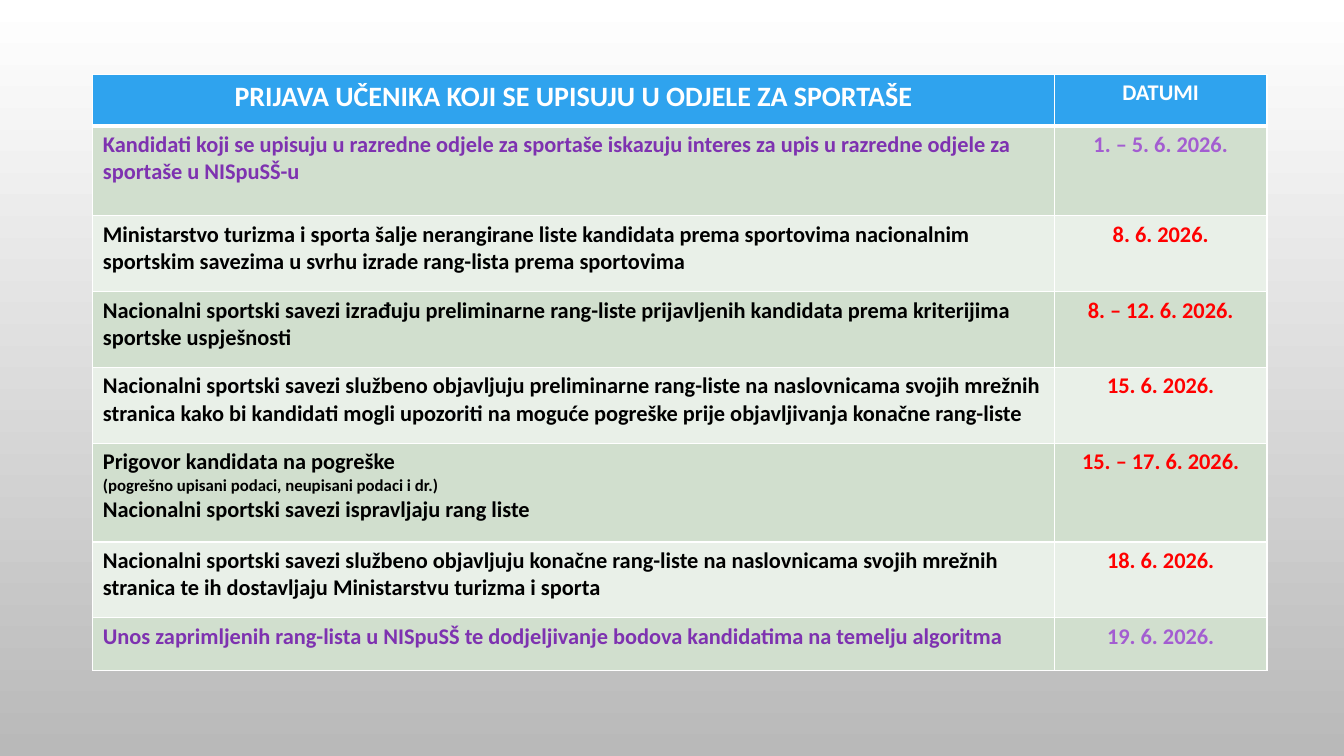
from dataclasses import dataclass

from lxml.etree import SubElement
from pptx import Presentation
from pptx.dml.color import RGBColor
from pptx.enum.text import PP_ALIGN
from pptx.oxml.ns import qn
from pptx.util import Cm, Pt


@dataclass(frozen=True)
class Theme:
    font: str = "Calibri"
    heading_size: int = 20
    body_size: int = 16
    note_size: int = 12
    white: str = "FFFFFF"
    black: str = "000000"
    red: str = "FF0000"
    purple: str = "7E32B0"
    light_purple: str = "A35DD1"
    header_fill: str = "2FA3EE"
    band_fills: tuple = ("D1DFCE", "E9F0E8")
    background_end: str = "B9B9B9"
    border_width: int = 1
    header_border_width: int = 3


THEME = Theme()

# Schedule: paragraphs, date, whether the school system handles the step, row height in cm
STEPS = [
    (["Kandidati koji se upisuju u razredne odjele za sportaše iskazuju interes "
      "za upis u razredne odjele za sportaše u NISpuSŠ-u"],
     "1. – 5. 6. 2026.", True, 2.26),
    (["Ministarstvo turizma i sporta šalje nerangirane liste kandidata prema sportovima "
      "nacionalnim sportskim savezima u svrhu izrade rang-lista prema sportovima"],
     "8. 6. 2026.", False, 1.91),
    (["Nacionalni sportski savezi izrađuju preliminarne rang-liste prijavljenih kandidata "
      "prema kriterijima sportske uspješnosti"],
     "8. – 12. 6. 2026.", False, 1.91),
    (["Nacionalni sportski savezi službeno objavljuju preliminarne rang-liste na naslovnicama "
      "svojih mrežnih stranica kako bi kandidati mogli upozoriti na moguće pogreške prije "
      "objavljivanja konačne rang-liste"],
     "15. 6. 2026.", False, 1.91),
    (["Prigovor kandidata na pogreške",
      "(pogrešno upisani podaci, neupisani podaci i dr.)",
      "Nacionalni sportski savezi ispravljaju rang liste"],
     "15. – 17. 6. 2026.", False, 2.49),
    (["Nacionalni sportski savezi službeno objavljuju konačne rang-liste na naslovnicama "
      "svojih mrežnih stranica te ih dostavljaju Ministarstvu turizma i sporta"],
     "18. 6. 2026.", False, 1.91),
    (["Unos zaprimljenih rang-lista u NISpuSŠ te dodjeljivanje bodova kandidatima "
      "na temelju algoritma"],
     "19. 6. 2026.", True, 1.32),
]
HEADER_HEIGHT = 1.3
COLUMN_WIDTHS = (24.23, 5.36)


def write_text(paragraph, text, *, size, color, align=PP_ALIGN.LEFT):
    paragraph.alignment = align
    run = paragraph.add_run()
    run.text = text
    run.font.name = THEME.font
    run.font.size = Pt(size)
    run.font.bold = True
    run.font.color.rgb = RGBColor.from_string(color)


class SlideBuilder:
    def __init__(self, slide, theme):
        self.slide = slide
        self.theme = theme

    def background(self):
        fill = self.slide.background.fill
        fill.gradient()
        fill.gradient_angle = 270
        colors = (self.theme.white, self.theme.background_end)
        for position, (stop, color) in enumerate(zip(fill.gradient_stops, colors)):
            stop.position = position
            stop.color.rgb = RGBColor.from_string(color)

    def table(self, left, top, widths, heights):
        table = self.slide.shapes.add_table(
            len(heights), len(widths), Cm(left), Cm(top),
            Cm(sum(widths)), Cm(sum(heights))).table
        for column, width in zip(table.columns, widths):
            column.width = Cm(width)
        for row, height in zip(table.rows, heights):
            row.height = Cm(height)
        return table

    def borders(self, cell, **widths):
        properties = cell._tc.get_or_add_tcPr()
        for side in "LRTB":
            width = widths.get(side, self.theme.border_width)
            line = SubElement(properties, qn(f"a:ln{side}"), w=str(Pt(width)))
            fill = SubElement(line, qn("a:solidFill"))
            SubElement(fill, qn("a:srgbClr"), val=self.theme.white)

    def cell(self, cell, lines, fill, align=PP_ALIGN.LEFT, **border_widths):
        self.borders(cell, **border_widths)
        cell.fill.solid()
        cell.fill.fore_color.rgb = RGBColor.from_string(fill)
        for index, (text, size, color) in enumerate(lines):
            frame = cell.text_frame
            paragraph = frame.add_paragraph() if index else frame.paragraphs[0]
            write_text(paragraph, text, size=size, color=color, align=align)


def main():
    presentation = Presentation()
    presentation.slide_width = Cm(33.87)
    presentation.slide_height = Cm(19.05)
    slide = presentation.slides.add_slide(presentation.slide_layouts[6])
    builder = SlideBuilder(slide, THEME)
    builder.background()

    heights = [HEADER_HEIGHT] + [step[-1] for step in STEPS]
    table = builder.table(2.34, 1.88, COLUMN_WIDTHS, heights)

    # Header row
    headings = [("PRIJAVA UČENIKA KOJI SE UPISUJU U ODJELE ZA SPORTAŠE", THEME.heading_size),
                ("DATUMI", THEME.body_size)]
    for column, (text, size) in enumerate(headings):
        builder.cell(table.cell(0, column), [(text, size, THEME.white)], THEME.header_fill,
                     PP_ALIGN.CENTER, B=THEME.header_border_width)

    # Steps with their dates
    for row, (texts, date, in_system, _) in enumerate(STEPS, start=1):
        fill = THEME.band_fills[(row - 1) % 2]
        text_color = THEME.purple if in_system else THEME.black
        date_color = THEME.light_purple if in_system else THEME.red
        top_width = THEME.header_border_width if row == 1 else THEME.border_width
        lines = [(text, THEME.note_size if text.startswith("(") else THEME.body_size, text_color)
                 for text in texts]
        builder.cell(table.cell(row, 0), lines, fill, T=top_width)
        builder.cell(table.cell(row, 1), [(date, THEME.body_size, date_color)], fill,
                     PP_ALIGN.CENTER, T=top_width)

    presentation.save("out.pptx")


if __name__ == "__main__":
    main()
